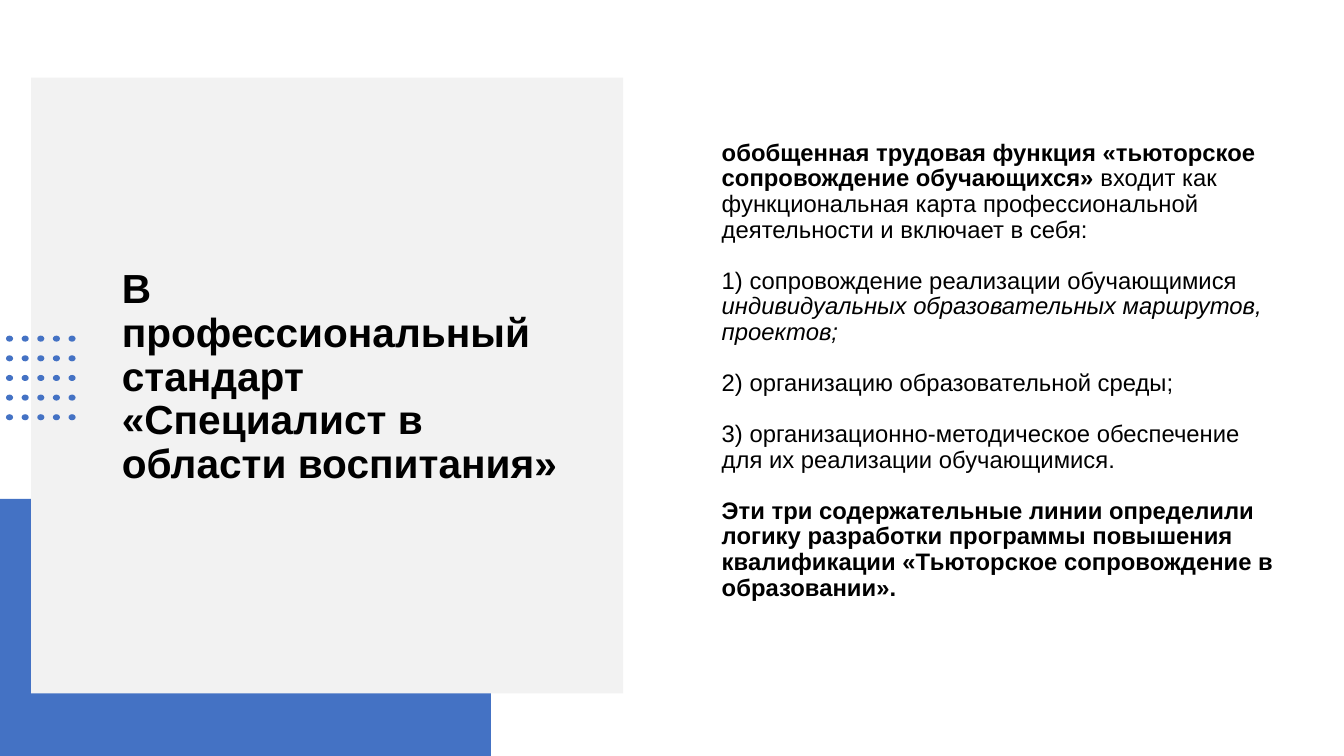
import pptx
import pptx.util
import pptx.dml.color
import pptx.enum.shapes
import pptx.enum.text

Inches, Pt = pptx.util.Inches, pptx.util.Pt
Kind = pptx.enum.shapes.MSO_SHAPE
COLORS = {"blue": "4472C4", "grey": "F2F2F2", "text": "000000"}


def add_form(shapes, kind, box, color):
    form = shapes.add_shape(kind, *[Inches(v) for v in box])
    form.shadow.inherit = False
    form.fill.solid()
    form.fill.fore_color.rgb = pptx.dml.color.RGBColor.from_string(COLORS[color])
    form.line.fill.background()


def add_text(box, paras, size=17, before=0, after=0, indent=0, bottom=0.05):
    """Each paragraph is a list of (text, style); style holds "b" and/or "i"."""
    frame = slide.shapes.add_textbox(*[Inches(v) for v in box]).text_frame
    frame.word_wrap = True
    frame.vertical_anchor = pptx.enum.text.MSO_ANCHOR.MIDDLE
    frame.margin_bottom = Inches(bottom)
    for n, runs in enumerate(paras):
        para = frame.add_paragraph() if n else frame.paragraphs[0]
        para.line_spacing = 0.9
        para.space_before, para.space_after = Pt(before), Pt(after)
        if indent:
            props = para._p.get_or_add_pPr()
            props.set("marL", str(Inches(indent)))
            props.set("indent", "0")
        for text, style in runs:
            run = para.add_run()
            run.text = text
            font = run.font
            font.name, font.size = "Arial", Pt(size)
            font.bold, font.italic = "b" in style, "i" in style
            font.color.rgb = pptx.dml.color.RGBColor.from_string(COLORS["text"])


deck = pptx.Presentation()
deck.slide_width, deck.slide_height = Inches(13.33), Inches(7.5)
slide = deck.slides.add_slide(deck.slide_layouts[6])

# Panels
add_form(slide.shapes, Kind.RECTANGLE, (0, 4.95, 4.87, 2.55), "blue")
add_form(slide.shapes, Kind.RECTANGLE, (0.31, 0.77, 5.87, 6.11), "grey")

# Title
add_text((1.11, 1.47, 4.59, 4.56),
         [[("В профессиональный стандарт «Специалист в области воспитания»", "b")]],
         size=29)

# Dot grid
dots = slide.shapes.add_group_shape()
for col in range(5):
    for row in range(5):
        add_form(dots.shapes, Kind.OVAL,
                 (0.06 + 0.155 * col, 3.33 + 0.195 * row, 0.07, 0.06), "blue")

# Body
body = [
    [("обобщенная трудовая функция «тьюторское сопровождение обучающихся» ", "b"),
     ("входит как функциональная карта профессиональной деятельности "
      "и включает в себя:", "")],
    [("1) сопровождение реализации обучающимися ", ""),
     ("индивидуальных образовательных маршрутов, проектов;", "i")],
    [("2) организацию образовательной среды;", "")],
    [("3) организационно-методическое обеспечение для их реализации "
      "обучающимися.", "")],
    [("Эти три содержательные линии определили логику разработки программы "
      "повышения квалификации «Тьюторское сопровождение в образовании».", "b")],
]
add_text((6.81, 0.82, 5.99, 6.11), body, before=10, after=8, indent=0.25, bottom=0.44)

deck.save("out.pptx")
